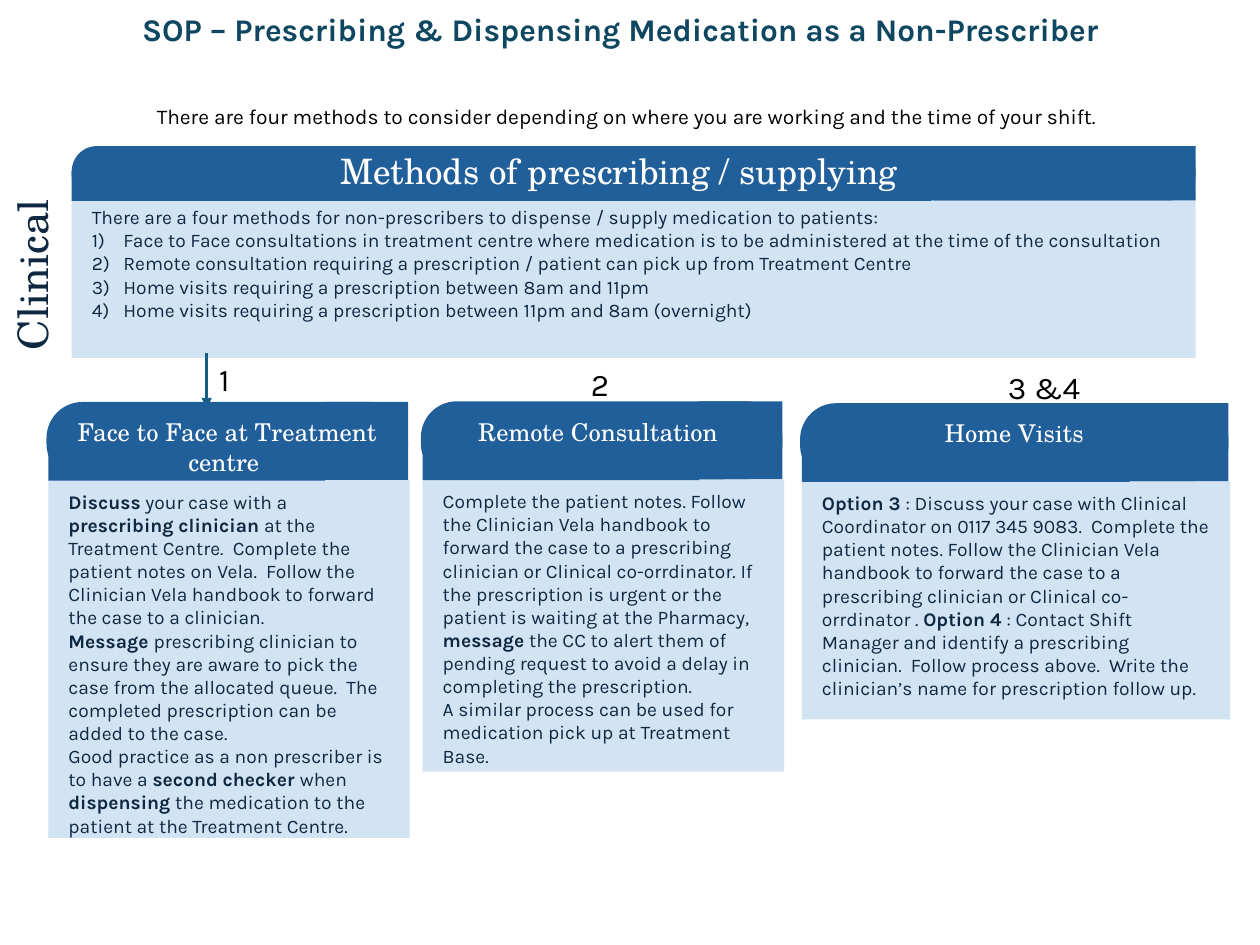
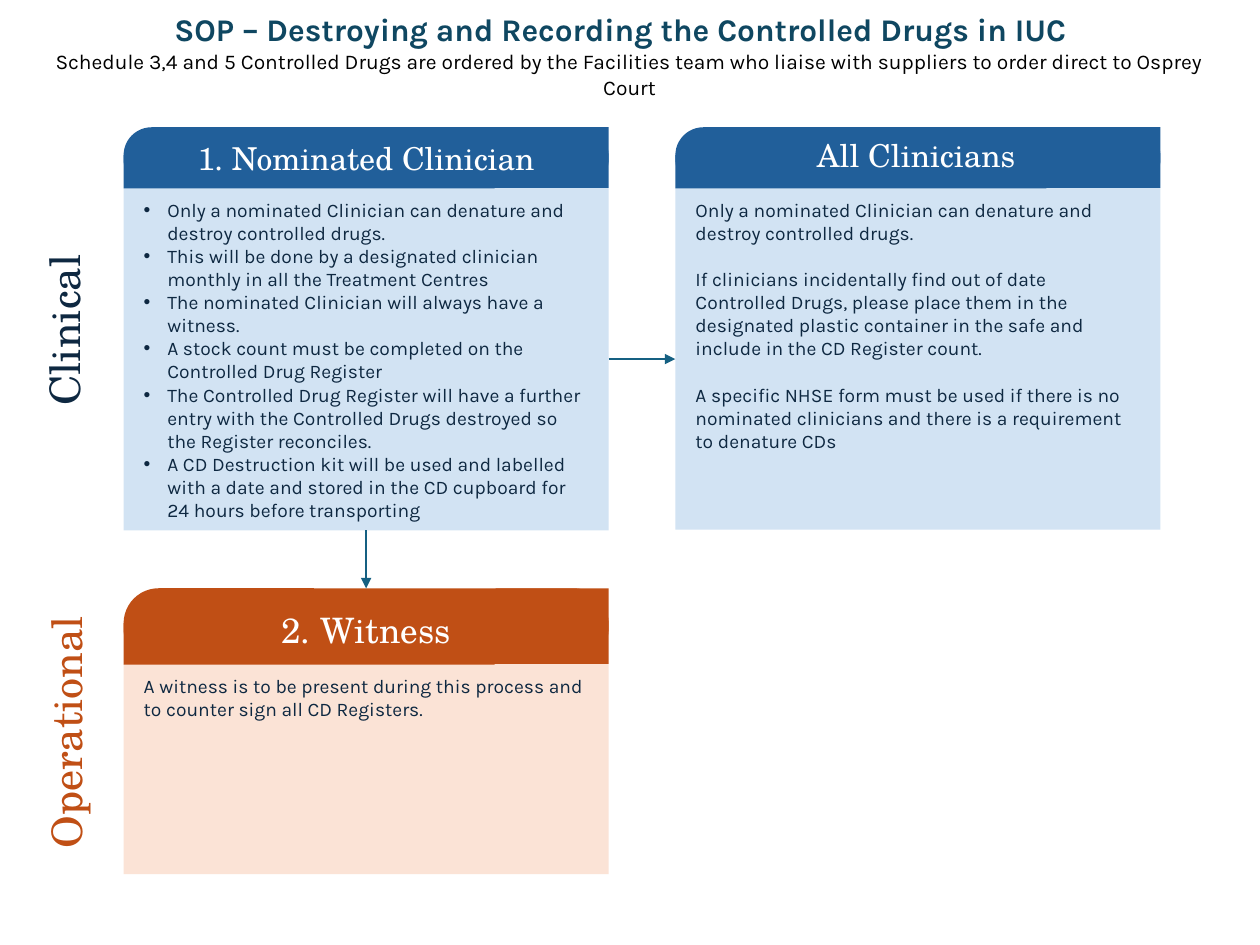
from lxml.etree import SubElement
from pptx import Presentation
from pptx.dml.color import RGBColor
from pptx.enum.shapes import MSO_CONNECTOR, MSO_SHAPE
from pptx.enum.text import MSO_ANCHOR, PP_ALIGN
from pptx.oxml.ns import qn
from pptx.util import Pt

SANS, SERIF = "Karla", "TeX Gyre Schola"
NAVY, TEAL, ARROW = "0E2841", "0F4761", "156082"
BLACK, WHITE = "000000", "FFFFFF"
CLINICAL = ("215F9A", "D2E3F3")  # header band, body
OPERATIONAL = ("C04F15", "FBE3D6")


def color(hex_code):
    return RGBColor.from_string(hex_code)


class Sop:
    """Shared style of the procedure slides, drawing on the current slide."""

    def __init__(self):
        self.deck = Presentation()
        self.deck.slide_width, self.deck.slide_height = Pt(720), Pt(540)
        self.slide = None

    def new_slide(self, title, intro, intro_top):
        self.slide = self.deck.slides.add_slide(self.deck.slide_layouts[6])
        heading = self.label(title, 36, 0.7, 637.2, 29.5, 18, SANS, TEAL)
        heading.font.bold = True
        heading.line_spacing = 1.07
        heading.space_before, heading.space_after = Pt(8), Pt(4)
        self.label(intro, 16.6, intro_top, 686.2, 21.6, 12, SANS, BLACK)

    def set_text(self, paragraph, text, size, font, ink, align):
        """Fill a paragraph; ** switches bold on and off."""
        paragraph.alignment = align
        paragraph.font.size, paragraph.font.name = Pt(size), font
        paragraph.font.color.rgb = color(ink)
        for index, part in enumerate(text.split("**")):
            if part:
                run = paragraph.add_run()
                run.text = part
                if index % 2:
                    run.font.bold = True

    def label(self, text, left, top, width, height, size, font, ink,
              align=PP_ALIGN.CENTER, rotation=0):
        box = self.slide.shapes.add_textbox(
            Pt(left), Pt(top), Pt(width), Pt(height))
        box.rotation = rotation
        box.text_frame.word_wrap = True
        paragraph = box.text_frame.paragraphs[0]
        self.set_text(paragraph, text, size, font, ink, align)
        return paragraph

    def side_label(self, text, left, top, width, ink):
        self.label(text, left, top, width, 36, 24, SERIF, ink, rotation=270)

    def block(self, kind, left, top, width, height, fill):
        shape = self.slide.shapes.add_shape(
            kind, Pt(left), Pt(top), Pt(width), Pt(height))
        shape.shadow.inherit = False
        shape.fill.solid()
        shape.fill.fore_color.rgb = color(fill)
        shape.line.fill.background()
        return shape

    def bullet(self, paragraph, mark, indent):
        props = paragraph._p.get_or_add_pPr()
        props.set("marL", str(Pt(indent)))
        props.set("indent", str(-Pt(indent)))
        if mark == "1)":
            SubElement(props, qn("a:buAutoNum"), type="arabicParenR")
        else:
            SubElement(props, qn("a:buFont"), typeface="Arial")
            SubElement(props, qn("a:buChar"), char=mark)

    def body(self, left, top, width, height, fill, texts, mark, indent,
             plain, gap):
        """Body panel; the first `plain` paragraphs carry no bullet."""
        panel = self.block(MSO_SHAPE.RECTANGLE, left, top, width, height, fill)
        frame = panel.text_frame
        frame.word_wrap = True
        frame.vertical_anchor = MSO_ANCHOR.TOP
        frame.margin_left = frame.margin_right = Pt(11.5)
        frame.margin_top = frame.margin_bottom = Pt(5.8)
        for index, text in enumerate(texts):
            paragraph = frame.add_paragraph() if index else frame.paragraphs[0]
            if mark and index >= plain:
                self.bullet(paragraph, mark, indent)
            if index:
                paragraph.space_before = Pt(gap)
            self.set_text(paragraph, text, 11, SANS, NAVY, PP_ALIGN.LEFT)

    def card(self, title, texts, left, top, width, head, depth, size, drop,
             scheme=CLINICAL, shift=0, overlap=0, trim=0,
             mark=None, indent=0, plain=0, gap=0):
        """Body panel under a header band whose top left corner is round."""
        band, fill = scheme
        self.body(left + shift, top + head - overlap, width, depth, fill,
                  texts, mark, indent, plain, gap)
        # Header: square lower left, rounded band, square right end
        self.block(MSO_SHAPE.RECTANGLE, left + shift, top + head * 0.46,
                   width * 0.765, head * 0.55, band)
        rounded = self.block(
            MSO_SHAPE.ROUNDED_RECTANGLE, left, top, width, head, band)
        rounded.adjustments[0] = 0.463
        self.block(MSO_SHAPE.RECTANGLE, left + width * 0.767, top,
                   width * 0.233, head, band)
        self.label(title, left, top + drop, width - trim, head,
                   size, SERIF, WHITE)

    def arrow(self, x1, y1, x2, y2):
        line = self.slide.shapes.add_connector(
            MSO_CONNECTOR.STRAIGHT, Pt(x1), Pt(y1), Pt(x2), Pt(y2))
        line.line.color.rgb = color(ARROW)
        line.line.width = Pt(1.5)
        SubElement(line.line._get_or_add_ln(), qn("a:tailEnd"),
                   type="triangle")
        SubElement(line._element.spPr, qn("a:effectLst"))


def prescribing(sop):
    sop.new_slide(
        "SOP – Prescribing & Dispensing Medication as a Non-Prescriber",
        "There are four methods to consider depending on where you are "
        "working and the time of your shift. ", 55.4)
    sop.side_label("Clinical", -84.2, 139, 204.5, NAVY)

    # Overview of the four methods
    sop.card("Methods of prescribing / supplying ", [
        "There are a four methods for non-prescribers to dispense / supply "
        "medication to patients:",
        "Face to Face consultations in treatment centre where medication is "
        "to be administered at the time of the consultation",
        "Remote consultation requiring a prescription / patient can pick up "
        "from Treatment Centre",
        "Home visits requiring a prescription between 8am and 11pm",
        "Home visits requiring a prescription between 11pm and 8am "
        "(overnight)",
    ], 41, 83.5, 642.2, 31, 92.9, size=20, drop=-1.4, overlap=2.9, trim=10.8,
        mark="1)", indent=18, plain=1)

    # Method numbers above the cards
    sop.arrow(118.1, 201.6, 118.1, 233.3)
    for number, left, top in [("1", 118.1, 202.3), ("2", 330.5, 205.2),
                              ("3 &4", 568.8, 206.6)]:
        sop.label(number, left, top, 61.2, 28.8, 18, SANS, BLACK,
                  PP_ALIGN.LEFT)

    # One card for each way of working
    face_to_face = [
        "**Discuss** your case with a **prescribing clinician** at the "
        "Treatment Centre.  Complete the patient notes on Vela.  Follow the "
        "Clinician Vela handbook to forward the case to a clinician.",
        "**Message **prescribing clinician to ensure they are aware to pick "
        "the case from the allocated queue.  The completed prescription can "
        "be added to the case.",
        "Good practice as a non prescriber is to have a **second checker "
        "**when **dispensing** the medication to the patient at the "
        "Treatment Centre.",
    ]
    remote = [
        "Complete the patient notes. Follow the Clinician Vela handbook to "
        "forward the case to a prescribing clinician or Clinical "
        "co-orrdinator. If the prescription is urgent or the patient is "
        "waiting at the Pharmacy, **message** the CC to alert them of "
        "pending request to avoid a delay in completing the prescription.",
        "A similar process can be used for medication pick up at Treatment "
        "Base.",
    ]
    home = [
        "**Option 3 **: Discuss your case with Clinical Coordinator on "
        "0117 345 9083.  Complete the patient notes. Follow the Clinician "
        "Vela handbook to forward the case to a prescribing clinician or "
        "Clinical co-orrdinator . **Option 4 **: Contact Shift Manager and "
        "identify a prescribing clinician.  Follow process above.  Write "
        "the clinician’s name for prescription follow up.",
    ]
    for title, texts, left, top, width, depth in [
        ("Face to Face at Treatment centre ", face_to_face,
         26.6, 229.7, 206.6, 204.5),
        ("Remote Consultation ", remote, 240.5, 229.3, 206.6, 167),
        ("Home Visits", home, 457.2, 230.4, 244.8, 136.1),
    ]:
        sop.card(title, texts, left, top, width, 44.6, depth,
                 size=14, drop=5.2, shift=1)


def destroying(sop):
    sop.new_slide(
        "SOP – Destroying and Recording the Controlled Drugs in IUC",
        "Schedule 3,4 and 5 Controlled Drugs are ordered by the Facilities "
        "team who liaise with suppliers to order direct to Osprey Court",
        24.5)
    sop.side_label("Clinical", -77.8, 170.6, 229, NAVY)
    sop.side_label("Operational", -43.9, 400.3, 163.4, OPERATIONAL[0])

    # Clinical cards
    left, right, width = 70.6, 385.9, 277.2
    sop.card("1. Nominated Clinician", [
        "Only a nominated Clinician can denature and destroy controlled "
        "drugs.",
        "This will be done by a designated clinician monthly in all the "
        "Treatment Centres",
        "The nominated Clinician will always have a witness.",
        "A stock count must be completed on the Controlled Drug Register",
        "The Controlled Drug Register will have a further entry with the "
        "Controlled Drugs destroyed so the Register reconciles.",
        "A CD Destruction kit will be used and labelled with a date and "
        "stored in the CD cupboard for 24 hours before transporting",
    ], left, 72.7, width, 34.6, 195.8, size=18, drop=2.9,
        mark="•", indent=13.5)
    sop.card("All Clinicians", [
        "Only a nominated Clinician can denature and destroy controlled "
        "drugs.",
        "If clinicians incidentally find out of date Controlled Drugs, "
        "please place them in the designated plastic container in the safe "
        "and include in the CD Register count.",
        "A specific NHSE form must be used if there is no nominated "
        "clinicians and there is a requirement to denature CDs",
    ], right, 72.7, width, 34.6, 195.4, size=18, drop=1.4, trim=2, gap=13.2)

    # Operational card
    sop.card("2. Witness", [
        "A witness is to be present during this process and to counter sign "
        "all CD Registers.",
    ], left, 336.2, width, 43.2, 120.2, size=20, drop=7.9,
        scheme=OPERATIONAL)

    # Flow between the cards
    sop.arrow(left + width / 2, 303.1, left + width / 2, 336.2)
    sop.arrow(left + width, 205.2, right, 205.2)


def main():
    sop = Sop()
    prescribing(sop)
    destroying(sop)
    sop.deck.save("out.pptx")


if __name__ == "__main__":
    main()
